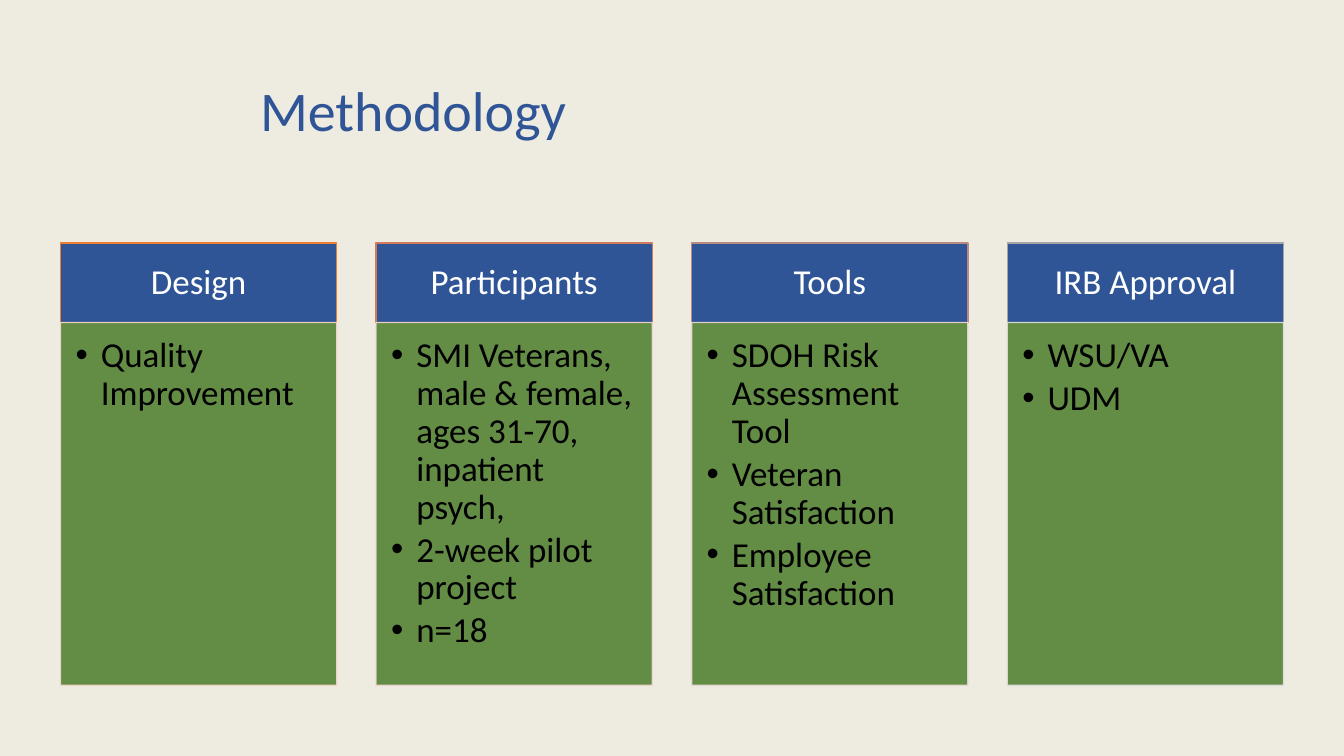
import dataclasses

import lxml.etree
import pptx
import pptx.dml.color
import pptx.enum.shapes
import pptx.enum.text
import pptx.oxml.ns
import pptx.util

WIDTH, HEIGHT = 13.33, 7.5
MARGIN, COLUMN, GAP = 0.6, 2.74, 0.39
HEADER_TOP, HEADER_ROW, BODY_ROW = 2.41, 0.79, 3.6
FONT = "Calibri"
BLUE, GREEN, BLACK, WHITE = "2F5597", "548235", "000000", "FFFFFF"
ANCHOR = pptx.enum.text.MSO_ANCHOR
ALIGN = pptx.enum.text.PP_ALIGN
Inches = pptx.util.Inches
Pt = pptx.util.Pt


@dataclasses.dataclass
class Column:
    heading: str
    items: list[str]
    header_line: str
    body_line: str


COLUMNS = [
    Column("Design", ["Quality Improvement"], "ED7D31", "F8D7CE"),
    Column(
        "Participants",
        [
            "SMI Veterans, male & female, ages 31-70, inpatient psych,",
            "2-week pilot project",
            "n=18",
        ],
        "D17B5C",
        "F1D8D4",
    ),
    Column(
        "Tools",
        ["SDOH Risk Assessment Tool", "Veteran Satisfaction", "Employee Satisfaction"],
        "B98A82",
        "E9DBDA",
    ),
    Column("IRB Approval", ["WSU/VA", "UDM"], "A5A5A5", "E1E1E1"),
]


def rgb(value: str) -> pptx.dml.color.RGBColor:
    return pptx.dml.color.RGBColor.from_string(value)


def add_box(s, left: float, top: float, width: float, height: float,
            fill: str, line: str | None = None, opacity: int = 100):
    sp = s.shapes.add_shape(
        pptx.enum.shapes.MSO_SHAPE.RECTANGLE,
        Inches(left), Inches(top), Inches(width), Inches(height),
    )
    sp.shadow.inherit = False
    sp.fill.solid()
    sp.fill.fore_color.rgb = rgb(fill)
    if line:
        sp.line.color.rgb = rgb(line)
        sp.line.width = Pt(1)
    else:
        sp.line.fill.background()
    if opacity < 100:
        for color in sp.element.spPr.iter(pptx.oxml.ns.qn("a:srgbClr")):
            alpha = lxml.etree.SubElement(color, pptx.oxml.ns.qn("a:alpha"))
            alpha.set("val", str(opacity * 1000))
    return sp


def add_bullet(p, indent: float) -> None:
    props = p._p.get_or_add_pPr()
    props.set("marL", str(Inches(indent)))
    props.set("indent", str(-Inches(indent)))
    font = lxml.etree.SubElement(props, pptx.oxml.ns.qn("a:buFont"))
    font.set("typeface", "Arial")
    bullet = lxml.etree.SubElement(props, pptx.oxml.ns.qn("a:buChar"))
    bullet.set("char", "•")


def write(sp, lines: list[str], *, size: float, color: str, insets: tuple[float, ...],
          align=ALIGN.LEFT, anchor=ANCHOR.MIDDLE, bullets: bool = False) -> None:
    tf = sp.text_frame
    tf.word_wrap = True
    tf.vertical_anchor = anchor
    tf.margin_left, tf.margin_top, tf.margin_right, tf.margin_bottom = map(Inches, insets)
    for i, text in enumerate(lines):
        p = tf.add_paragraph() if i else tf.paragraphs[0]
        p.alignment = align
        p.line_spacing = 0.9
        p.space_after = Pt(3.75)
        if bullets:
            add_bullet(p, 0.25)
        r = p.add_run()
        r.text = text
        r.font.name = FONT
        r.font.size = Pt(size)
        r.font.color.rgb = rgb(color)


def add_column(s, index: int, column: Column) -> None:
    left = MARGIN + index * (COLUMN + GAP)
    header = add_box(s, left, HEADER_TOP, COLUMN, HEADER_ROW, BLUE, column.header_line)
    write(header, [column.heading], size=25, color=WHITE,
          insets=(0.19, 0.11, 0.19, 0.11), align=ALIGN.CENTER)
    body = add_box(s, left, HEADER_TOP + HEADER_ROW, COLUMN, BODY_ROW,
                   GREEN, column.body_line, opacity=90)
    write(body, column.items, size=25, color=BLACK,
          insets=(0.15, 0.15, 0.19, 0.22), anchor=ANCHOR.TOP, bullets=True)


def main() -> None:
    prs = pptx.Presentation()
    prs.slide_width, prs.slide_height = Inches(WIDTH), Inches(HEIGHT)
    s = prs.slides.add_slide(prs.slide_layouts[6])
    add_box(s, 0, 0, WIDTH, HEIGHT, "F2F2F2")
    add_box(s, 0, 0, WIDTH, HEIGHT, "BF9000", opacity=7)
    title = s.shapes.add_textbox(
        Inches(MARGIN), Inches(0.4), Inches(WIDTH - 2 * MARGIN), Inches(1.45)
    )
    write(title, ["Methodology"], size=40, color=BLUE, insets=(1.98, 0.05, 0.1, 0.05))
    for index, column in enumerate(COLUMNS):
        add_column(s, index, column)
    prs.save("out.pptx")


if __name__ == "__main__":
    main()
